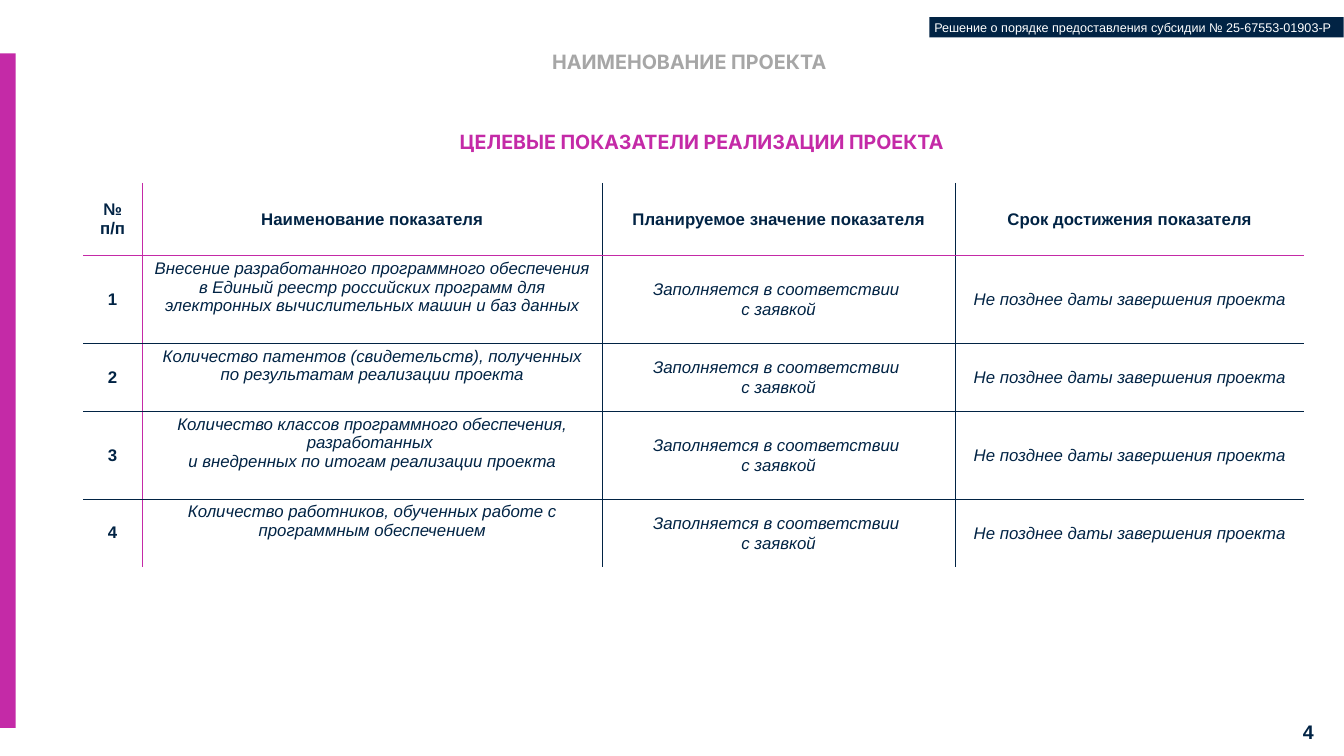
from typing import NamedTuple, Optional

from lxml.etree import SubElement
from pptx import Presentation
from pptx.dml.color import RGBColor
from pptx.enum.shapes import MSO_SHAPE as Preset
from pptx.enum.text import MSO_ANCHOR as Anchor, MSO_AUTO_SIZE as AutoSize, PP_ALIGN as Align
from pptx.oxml.ns import qn
from pptx.util import Cm, Pt

NAVY = RGBColor(0x01, 0x23, 0x44)
MAGENTA = RGBColor(0xC4, 0x2A, 0xA7)
GREY = RGBColor(0xA6, 0xA6, 0xA6)
WHITE = RGBColor(0xFF, 0xFF, 0xFF)


class Box(NamedTuple):
    left: float
    top: float
    width: float
    height: float

    def lengths(self) -> list:
        return [Cm(value) for value in self]


class Style(NamedTuple):
    size: float
    color: RGBColor
    font: str = "Arial"
    bold: bool = False
    italic: bool = False
    align: Align = Align.CENTER
    spacing: Optional[float] = None


class Column(NamedTuple):
    """Width, body style and body cell insets of a table column."""
    title: str
    width: float
    style: Style
    side_inset: float
    end_inset: float
    anchor: Anchor = Anchor.MIDDLE


class Indicator(NamedTuple):
    name: str
    height: float
    value: str = "Заполняется в соответствии \vс заявкой"
    deadline: str = "Не позднее даты завершения проекта"


HEADER = Style(24, NAVY, bold=True)
NAME = Style(24, NAVY, italic=True)
TARGET = NAME._replace(spacing=1.07)

COLUMNS = [
    Column("№ п/п", 2.97, HEADER, 0.36, 0.36),
    Column("Наименование показателя", 23.19, NAME, 0.46, 0.18, Anchor.TOP),
    Column("Планируемое значение показателя", 17.78, TARGET, 0.1, 0.18),
    Column("Срок достижения показателя", 17.6, TARGET, 0.1, 0.18),
]
HEADER_HEIGHT = 3.66
INDICATORS = [
    Indicator("Внесение разработанного программного обеспечения в Единый реестр "
              "российских программ для электронных вычислительных машин и баз данных", 4.42),
    Indicator("Количество патентов (свидетельств), полученных "
              "по результатам реализации проекта", 3.43),
    Indicator("Количество классов программного обеспечения, разработанных \n"
              "и внедренных по итогам реализации проекта", 4.42),
    Indicator("Количество работников, обученных работе с программным обеспечением", 3.43),
]


def write(frame, text: str, style: Style) -> None:
    frame.text = text
    for paragraph in frame.paragraphs:
        paragraph.alignment = style.align
        if style.spacing:
            paragraph.line_spacing = style.spacing
        for run in paragraph.runs:
            font = run.font
            font.name, font.size = style.font, Pt(style.size)
            font.bold, font.italic = style.bold, style.italic
            font.color.rgb = style.color


def place_text(shape, box: Box, text: str, style: Style) -> None:
    shape.left, shape.top, shape.width, shape.height = box.lengths()
    frame = shape.text_frame
    frame.word_wrap = True
    frame.auto_size = AutoSize.NONE
    frame.vertical_anchor = Anchor.MIDDLE
    write(frame, text, style)


def add_bar(slide, box: Box, color: RGBColor):
    bar = slide.shapes.add_shape(Preset.RECTANGLE, *box.lengths())
    bar.shadow.inherit = False
    bar.fill.solid()
    bar.fill.fore_color.rgb = color
    bar.line.fill.background()
    return bar


def add_border(cell, side: str, color: Optional[RGBColor]) -> None:
    line = SubElement(cell._tc.get_or_add_tcPr(), qn(f"a:ln{side}"), w=str(Pt(1)))
    if color is None:
        SubElement(line, qn("a:noFill"))
    else:
        fill = SubElement(line, qn("a:solidFill"))
        SubElement(fill, qn("a:srgbClr"), val=str(color))


def rule_color(index: int, count: int) -> Optional[RGBColor]:
    """Colour of the rule before a row or column: none outside, magenta after the first."""
    if index in (0, count):
        return None
    return MAGENTA if index == 1 else NAVY


def add_indicator_table(slide, left: float, top: float) -> None:
    heights = [HEADER_HEIGHT] + [indicator.height for indicator in INDICATORS]
    texts = [[column.title for column in COLUMNS]] + [
        [str(number), item.name, item.value, item.deadline]
        for number, item in enumerate(INDICATORS, 1)
    ]
    box = Box(left, top, sum(column.width for column in COLUMNS), sum(heights))
    table = slide.shapes.add_table(len(heights), len(COLUMNS), *box.lengths()).table
    table.first_row = table.horz_banding = False
    for column, spec_column in zip(table.columns, COLUMNS):
        column.width = Cm(spec_column.width)
    for r, height in enumerate(heights):
        table.rows[r].height = Cm(height)
        for c, column in enumerate(COLUMNS):
            cell = table.cell(r, c)
            style, side, end, anchor = column.style, column.side_inset, column.end_inset, column.anchor
            if r == 0:
                style, side, end, anchor = HEADER, 0.36, 0.18, Anchor.MIDDLE
            add_border(cell, "L", rule_color(c, len(COLUMNS)))
            add_border(cell, "R", rule_color(c + 1, len(COLUMNS)))
            add_border(cell, "T", rule_color(r, len(heights)))
            add_border(cell, "B", rule_color(r + 1, len(heights)))
            cell.fill.background()
            cell.margin_left = cell.margin_right = Cm(side)
            cell.margin_top = cell.margin_bottom = Cm(end)
            cell.vertical_anchor = anchor
            write(cell.text_frame, texts[r][c], style)


def main() -> None:
    deck = Presentation()
    deck.slide_width, deck.slide_height = Cm(67.74), Cm(38.1)
    slide = deck.slides.add_slide(deck.slide_layouts[5])

    add_bar(slide, Box(0, 2.69, 0.79, 33.99), MAGENTA)
    place_text(slide.shapes.title, Box(18.67, 6.3, 33.38, 1.7),
               "ЦЕЛЕВЫЕ ПОКАЗАТЕЛИ РЕАЛИЗАЦИИ ПРОЕКТА", Style(28, MAGENTA, "Inter", bold=True))
    add_indicator_table(slide, 4.19, 9.22)

    project_box = Box(4.88, 2.39, 59.72, 1.47)
    project = slide.shapes.add_textbox(*project_box.lengths())
    place_text(project, project_box, "НАИМЕНОВАНИЕ ПРОЕКТА", Style(28.2, GREY, "Inter", bold=True))

    number_box = Box(64.49, 36.12, 2.06, 1.55)
    page_number = slide.shapes.add_textbox(*number_box.lengths())
    place_text(page_number, number_box, "4", Style(28, NAVY, bold=True, align=Align.RIGHT))
    page_number.text_frame.margin_right = Cm(0.33)

    decision_box = Box(46.84, 0.86, 20.88, 1.02)
    decision = add_bar(slide, decision_box, NAVY)
    place_text(decision, decision_box,
               "Решение о порядке предоставления субсидии № 25-67553-01903-Р",
               Style(18, WHITE, align=Align.LEFT))

    deck.save("out.pptx")


if __name__ == "__main__":
    main()
